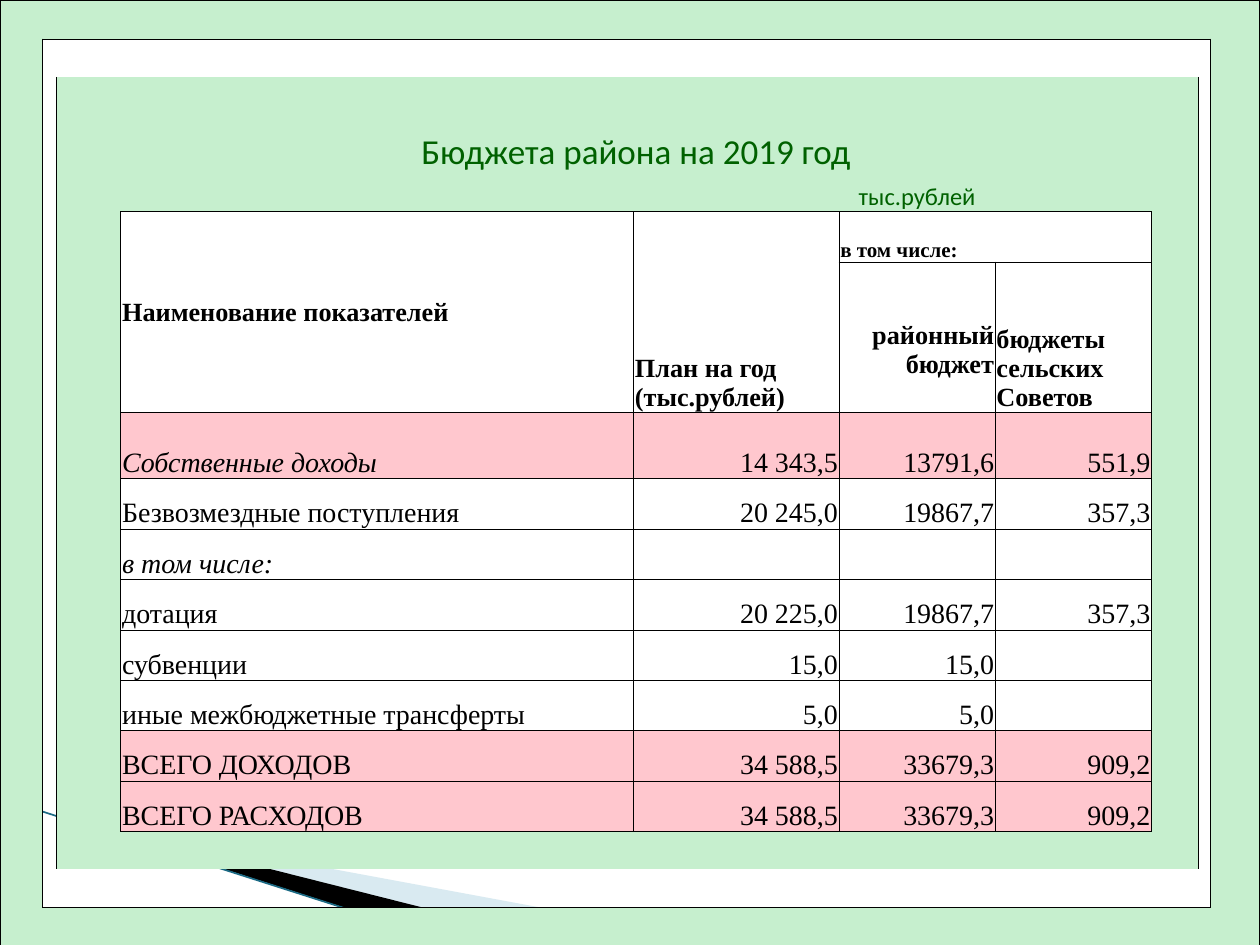
from collections import defaultdict
from itertools import product
from lxml import etree
from pptx import Presentation
from pptx import util as u
from pptx.dml.color import RGBColor
from pptx.enum import shapes, text
from pptx.oxml.ns import qn

GREEN, PINK, BLACK, TITLE = "C6EFCE", "FFC7CE", "000000", "006100"
SERIF, SANS = "Times New Roman", "Calibri"
COLS = [0.34, 0.11, 0.51, 4.07, 1.63, 1.24, 1.24, 0.37, 0.1, 0.39]
ROWS = [0.31, 0.3, 0.3, 0.47, 0.3, 0.4, 1.19, 0.53] + [0.4] * 7 + [0.3] * 3
LEFT, CENTER, RIGHT, JUSTIFY = (text.PP_ALIGN.LEFT, text.PP_ALIGN.CENTER,
                                text.PP_ALIGN.RIGHT, text.PP_ALIGN.JUSTIFY)
TOP, MIDDLE, BOTTOM = (text.MSO_ANCHOR.TOP, text.MSO_ANCHOR.MIDDLE,
                       text.MSO_ANCHOR.BOTTOM)
PLAIN_STYLE = "{2D5ABB26-0587-4C30-8999-92F81FD0307C}"
FRAME_MERGES = [(1, 1, 1, 7), (2, 1, 15, 1), (2, 8, 15, 8), (16, 1, 16, 8), (3, 3, 3, 6)]
HEADING_MERGES = [(5, 3, 6, 3), (5, 4, 6, 4), (5, 5, 5, 6)]
MERGES = FRAME_MERGES + HEADING_MERGES
DATA = [
    ("Собственные доходы", "14 343,5", "13791,6", "551,9"),
    ("Безвозмездные поступления", "20 245,0", "19867,7", "357,3"),
    ("в том числе:", "", "", ""),
    ("дотация", "20 225,0", "19867,7", "357,3"),
    ("субвенции", "15,0", "15,0", ""),
    ("иные межбюджетные трансферты", "5,0", "5,0", ""),
    ("ВСЕГО ДОХОДОВ", "34 588,5", "33679,3", "909,2"),
    ("ВСЕГО РАСХОДОВ", "34 588,5", "33679,3", "909,2"),
]
FIRST_DATA_ROW, FIRST_DATA_COL = 7, 3
PINK_ROWS = (7, 13, 14)
ITALIC_ROWS = (7, 9)


def rgb(color):
    return RGBColor.from_string(color)


def add_wedge(s, points, color, opacity=100):
    start, *rest = [(u.Inches(x), u.Inches(y)) for x, y in points]
    fb = s.shapes.build_freeform(*start)
    fb.add_line_segments(rest, close=True)
    sp = fb.convert_to_shape()
    sp.shadow.inherit = False
    sp.fill.solid()
    sp.fill.fore_color.rgb = rgb(color)
    sp.line.fill.background()
    if opacity < 100:
        clr = sp.fill._xPr.find(".//" + qn("a:srgbClr"))
        etree.SubElement(clr, qn("a:alpha"), val=str(opacity * 1000))


def add_line(s, start, end, color, width):
    x1, y1, x2, y2 = (u.Inches(v) for v in start + end)
    ln = s.shapes.add_connector(shapes.MSO_CONNECTOR.STRAIGHT, x1, y1, x2, y2)
    ln.line.color.rgb = rgb(color)
    ln.line.width = u.Pt(width)
    etree.SubElement(ln._element.spPr, qn("a:effectLst"))


def add_grid(s):
    frame = s.shapes.add_table(len(ROWS), len(COLS), 0, 0, u.Inches(10), u.Inches(7.5))
    table = frame.table
    table.first_row = table.horz_banding = False
    table._tbl.tblPr.find(qn("a:tableStyleId")).text = PLAIN_STYLE
    for col, width in zip(table.columns, COLS):
        col.width = u.Inches(width)
    for row, height in zip(table.rows, ROWS):
        row.height = u.Inches(height)
    for r1, c1, r2, c2 in MERGES:
        table.cell(r1, c1).merge(table.cell(r2, c2))
    return table


def outline(edges, r1, c1, r2, c2, sides="LRTB"):
    for row in range(r1, r2 + 1):
        if "L" in sides:
            edges[row, c1].add("L")
            edges[row, c1 - 1].add("R")
        if "R" in sides:
            edges[row, c2].add("R")
            edges[row, c2 + 1].add("L")
    for col in range(c1, c2 + 1):
        if "T" in sides:
            edges[r1, col].add("T")
            edges[r1 - 1, col].add("B")
        if "B" in sides:
            edges[r2, col].add("B")
            edges[r2 + 1, col].add("T")


def find_edges():
    edges = defaultdict(set)
    outline(edges, 0, 0, 17, 9)
    outline(edges, 1, 1, 16, 8)
    outline(edges, 2, 2, 15, 7, "LR")
    for box in HEADING_MERGES:
        outline(edges, *box)
    for row in range(6, 15):
        for col in range(3 if row > 6 else 5, 7):
            outline(edges, row, col, row, col)
    for r1, c1, r2, c2 in MERGES:
        for place in product(range(r1, r2 + 1), range(c1, c2 + 1)):
            edges[r1, c1] |= edges[place]
    return edges


def cell_color(row, col):
    if 5 <= row <= 14 and 3 <= col <= 6:
        return PINK if row in PINK_ROWS else None
    in_frame = 1 <= row <= 16 and 1 <= col <= 8
    in_panel = 2 <= row <= 15 and 2 <= col <= 7
    return None if in_frame and not in_panel else GREEN


def style_cell(cell, sides, color):
    cell.margin_left = cell.margin_right = cell.margin_top = u.Inches(0.01)
    cell.margin_bottom = 0
    tcPr = cell._tc.get_or_add_tcPr()
    for side in "LRTB":
        ln = etree.SubElement(tcPr, qn("a:ln" + side), w=str(u.Pt(0.5)))
        if side in sides:
            fill = etree.SubElement(ln, qn("a:solidFill"))
            etree.SubElement(fill, qn("a:srgbClr"), val=BLACK)
        else:
            etree.SubElement(ln, qn("a:noFill"))
    if color:
        cell.fill.solid()
        cell.fill.fore_color.rgb = rgb(color)
    else:
        cell.fill.background()
    etree.SubElement(cell.text_frame.paragraphs[0]._p, qn("a:endParaRPr"), sz="1000")


def write(cell, words, size, align=LEFT, anchor=BOTTOM, font=SERIF, color=BLACK,
          bold=False, italic=False):
    cell.vertical_anchor = anchor
    p = cell.text_frame.paragraphs[0]
    p.alignment = align
    r = p.add_run()
    r.text = words
    r.font.size = u.Pt(size)
    r.font.name = font
    r.font.bold = bold
    r.font.italic = italic
    r.font.color.rgb = rgb(color)


def write_headings(table):
    write(table.cell(3, 3), "Бюджета района на 2019 год", 20, CENTER, font=SANS, color=TITLE)
    write(table.cell(4, 5), "тыс.рублей", 14, CENTER, font=SANS, color=TITLE)
    write(table.cell(5, 3), "Наименование показателей", 15, anchor=MIDDLE, bold=True)
    write(table.cell(5, 4), "План на год (тыс.рублей)", 15, bold=True)
    write(table.cell(5, 5), "в том числе:", 12, bold=True)
    district = table.cell(6, 5)
    district.margin_top = u.Inches(0.47)
    write(district, "районный бюджет", 15, RIGHT, TOP, bold=True)
    write(table.cell(6, 6), "бюджеты сельских Советов", 15, JUSTIFY, bold=True)


def write_data(table):
    for row, values in enumerate(DATA, FIRST_DATA_ROW):
        for col, value in enumerate(values, FIRST_DATA_COL):
            if value:
                is_name = col == FIRST_DATA_COL
                write(table.cell(row, col), value, 16, LEFT if is_name else RIGHT,
                      italic=is_name and row in ITALIC_ROWS)


def main():
    prs = Presentation()
    prs.slide_width, prs.slide_height = u.Inches(10), u.Inches(7.5)
    s = prs.slides.add_slide(prs.slide_layouts[6])
    add_wedge(s, [(0.55, 6.51), (5.95, 7.51), (4.56, 7.51), (0.55, 6.5)], "A0CBDC", 40)
    add_wedge(s, [(0.53, 6.49), (4.57, 7.51), (3.72, 7.52), (0.54, 6.5)], BLACK)
    add_line(s, (-0.01, 6.33), (3.71, 7.52), "1B6A84", 0.95)
    table = add_grid(s)
    edges = find_edges()
    for row, col in product(range(len(ROWS)), range(len(COLS))):
        style_cell(table.cell(row, col), edges[row, col], cell_color(row, col))
    write_headings(table)
    write_data(table)
    prs.save("out.pptx")


if __name__ == "__main__":
    main()
